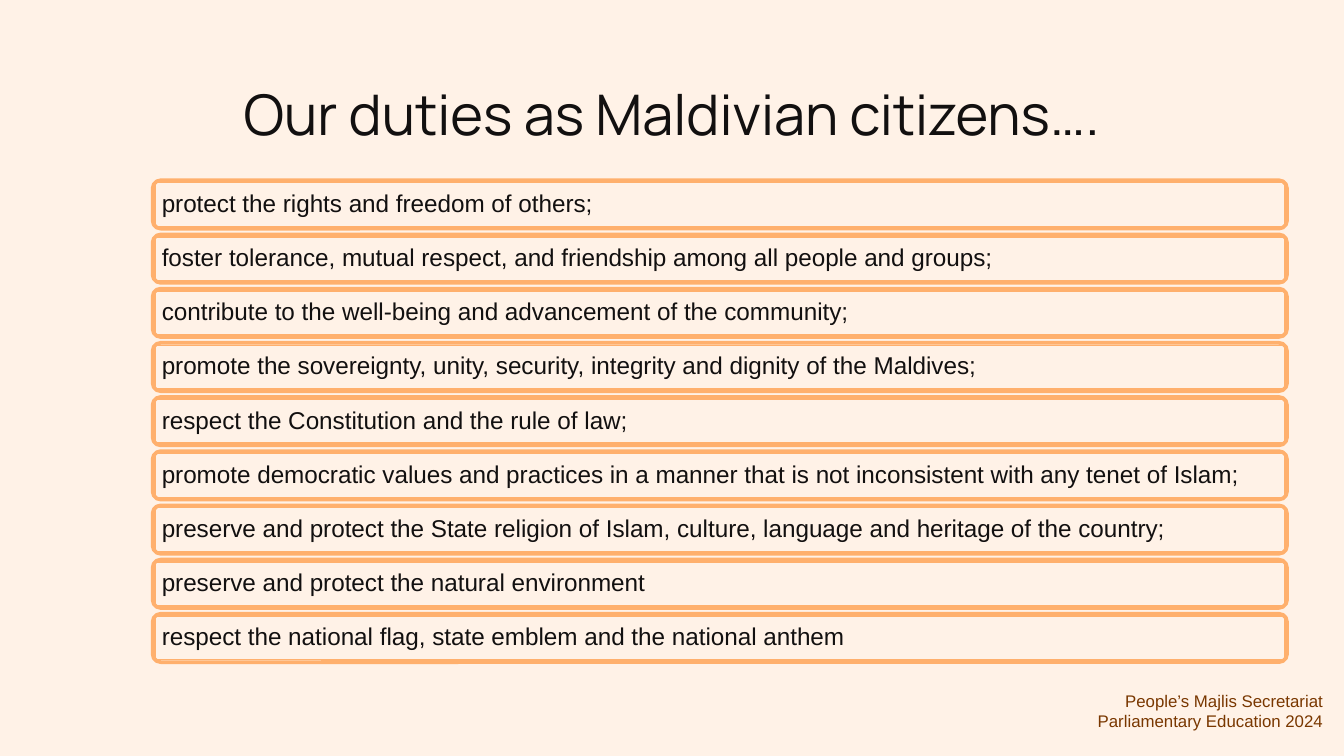
from pptx import Presentation
from pptx.dml.color import RGBColor
from pptx.enum.shapes import MSO_SHAPE as SHAPE
from pptx.enum.text import MSO_ANCHOR as ANCHOR, PP_ALIGN as ALIGN
from pptx.util import Pt

CREAM, ORANGE, INK, BROWN = "FFF2E7", "FFB06D", "121010", "793700"


def rgb(value):
    return RGBColor.from_string(value)


def write(sp, lines, size, font, color, align, frame, spacing=None):
    tf = sp.text_frame
    for name, value in frame.items():
        setattr(tf, name, value)
    for i, line in enumerate(lines):
        p = tf.paragraphs[0] if i == 0 else tf.add_paragraph()
        p.alignment = align
        p.line_spacing = spacing
        r = p.add_run()
        r.text = line
        for name, value in {"size": Pt(size), "name": font, "bold": False}.items():
            setattr(r.font, name, value)
        r.font.color.rgb = rgb(color)


prs = Presentation()
prs.slide_width, prs.slide_height = Pt(720), Pt(405)
s = prs.slides.add_slide(prs.slide_layouts[5])
s.background.fill.solid()
s.background.fill.fore_color.rgb = rgb(CREAM)

# Title
title = s.shapes.title
title_box = {"left": 56.2, "top": 35.3, "width": 607.7, "height": 45.4}
for name, value in title_box.items():
    setattr(title, name, Pt(value))
insets = dict.fromkeys(
    ["margin_left", "margin_right", "margin_top", "margin_bottom"], Pt(7.2))
write(title, ["Our duties as Maldivian citizens…."], 30, "Manrope", INK, ALIGN.CENTER,
      {**insets, "vertical_anchor": ANCHOR.TOP, "word_wrap": True})

# Duties: one rounded frame with a text panel per row
duties = [
    "protect the rights and freedom of others;",
    "foster tolerance, mutual respect, and friendship among all people and groups;",
    "contribute to the well-being and advancement of the community;",
    "promote the sovereignty, unity, security, integrity and dignity of the Maldives;",
    "respect the Constitution and the rule of law;",
    "promote democratic values and practices in a manner that is not inconsistent "
    "with any tenet of Islam;",
    "preserve and protect the State religion of Islam, culture, language and heritage "
    "of the country;",
    "preserve and protect the natural environment",
    "respect the national flag, state emblem and the national anthem",
]
LEFT, TOP, WIDTH, HEIGHT, PITCH = 81.8, 96.6, 607.7, 25.9, 29.03
INSET = 1.26
panel_format = {**dict.fromkeys(insets, Pt(3.6)),
                "vertical_anchor": ANCHOR.MIDDLE, "word_wrap": True}

for i, duty in enumerate(duties):
    top = TOP + i * PITCH
    row = s.shapes.add_group_shape()
    frame = row.shapes.add_shape(
        SHAPE.ROUNDED_RECTANGLE, Pt(LEFT), Pt(top), Pt(WIDTH), Pt(HEIGHT))
    frame.fill.solid()
    frame.fill.fore_color.rgb = rgb(CREAM)
    panel = row.shapes.add_shape(
        SHAPE.RECTANGLE, Pt(LEFT + INSET), Pt(top + INSET),
        Pt(WIDTH - 2 * INSET), Pt(HEIGHT - 2 * INSET))
    panel.fill.background()
    for sp, weight in ((frame, 2), (panel, 0.75)):
        sp.shadow.inherit = False
        sp.line.color.rgb = rgb(ORANGE)
        sp.line.width = Pt(weight)
    write(panel, [duty], 13, "Arial", INK, ALIGN.LEFT, panel_format, 0.9)

# Footer
footer = s.shapes.add_textbox(Pt(498.2), Pt(366.5), Pt(217.5), Pt(28.8))
write(footer, ["People’s Majlis Secretariat", "Parliamentary Education 2024"],
      9, "Arial", BROWN, ALIGN.RIGHT, {"word_wrap": True})

prs.save("out.pptx")
